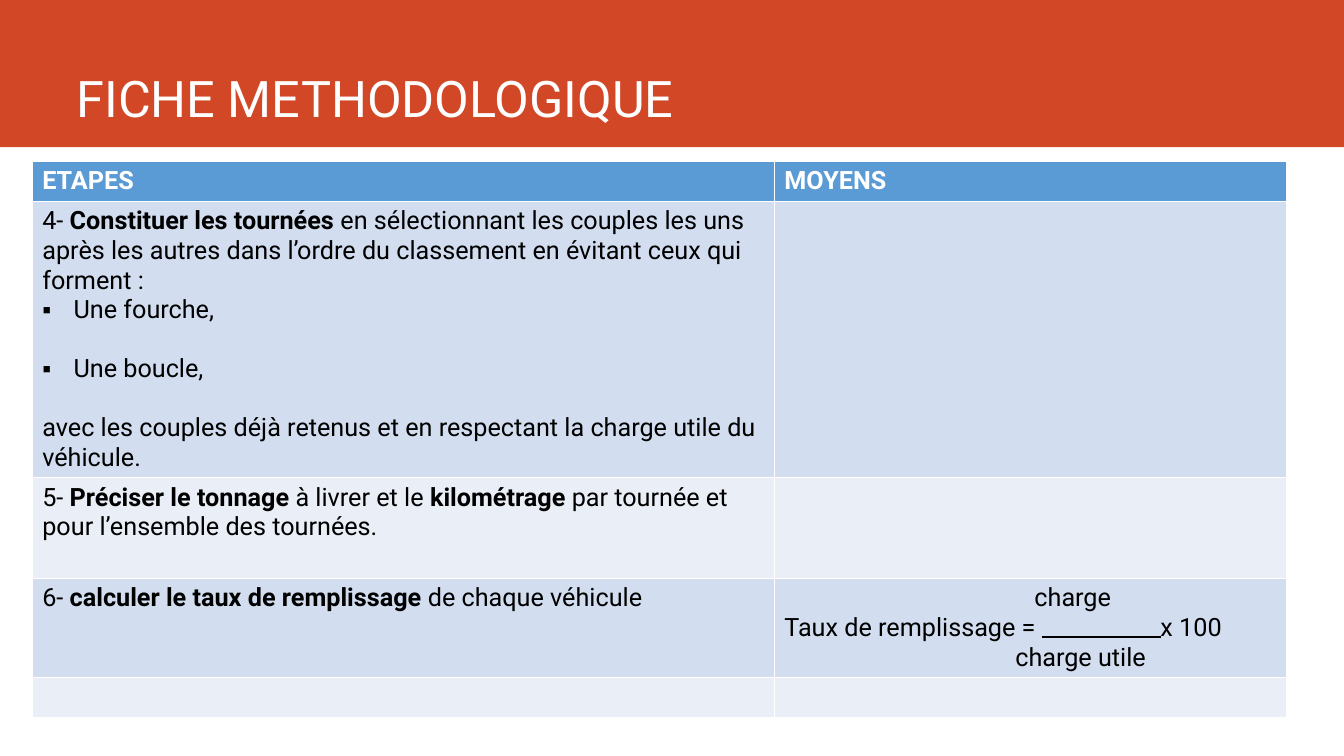
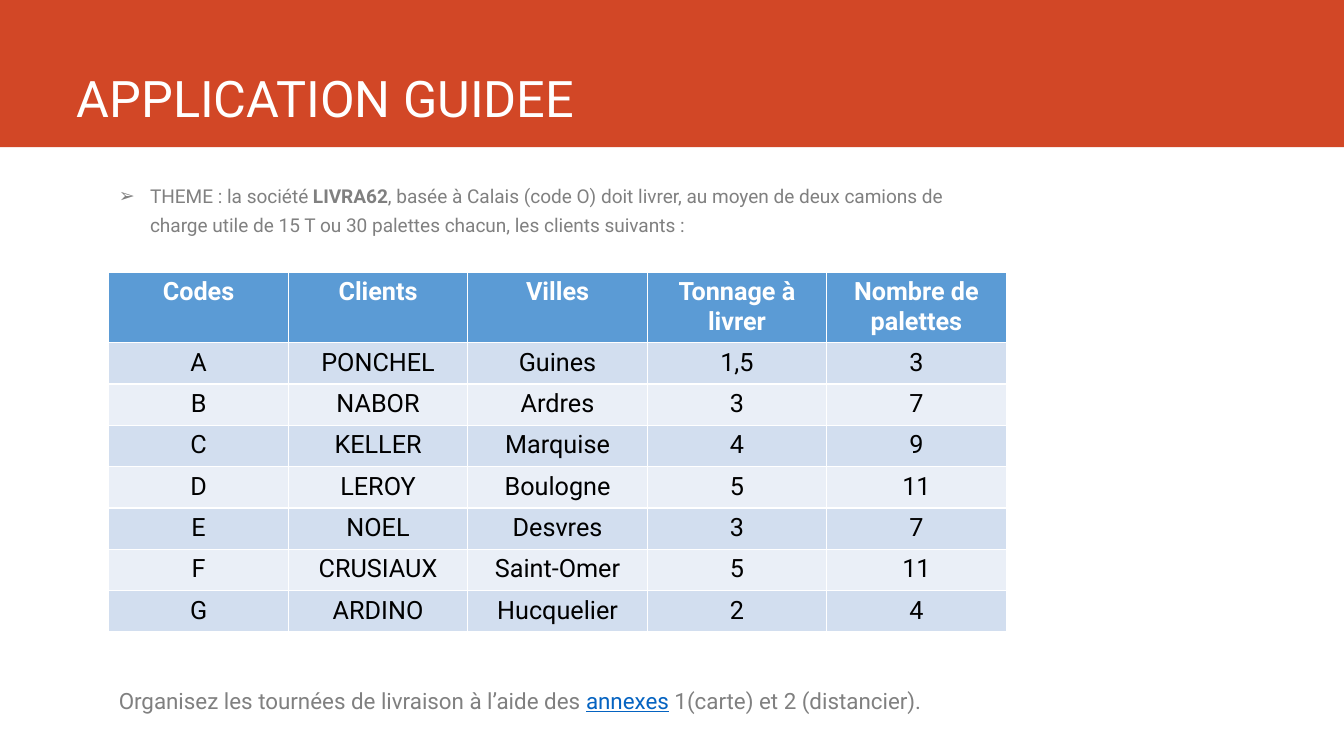
from dataclasses import dataclass

from lxml.etree import SubElement
from pptx import Presentation
from pptx.dml.color import RGBColor
from pptx.enum.shapes import MSO_CONNECTOR, MSO_SHAPE
from pptx.enum.text import MSO_ANCHOR, MSO_AUTO_SIZE, PP_ALIGN
from pptx.oxml.ns import qn
from pptx.util import Inches, Pt


@dataclass(frozen=True)
class Theme:
    font: str = "Roboto"
    band: str = "D24726"
    white: str = "FFFFFF"
    black: str = "000000"
    grey: str = "808080"
    link: str = "0563C1"
    header: str = "5B9BD5"
    stripes: tuple = ("D2DEEF", "EAEFF7")
    title_size: float = 36
    table_size: float = 18
    theme_size: float = 13.6
    task_size: float = 16


THEME = Theme()
WIDTH, HEIGHT = 13.33, 7.5
BAND_HEIGHT = 1.46
TITLE_BOX = (0.66, 0, 11.76, 1.32)
HANGING = 0.31
BLANK_LINE = 21

METHOD_TITLE = "FICHE METHODOLOGIQUE"
METHOD_ORIGIN = (0.32, 1.6)
METHOD_COLUMNS = (7.36, 5.08)
METHOD_ROWS = (0.4, 2.74, 1, 0.98, 0.4)
FRACTION_BAR = (10.33, 11.52, 6.32)
METHOD_CELLS = [
    ["ETAPES", "MOYENS"],
    [
        [
            "4- *Constituer les tournées *en sélectionnant les couples les uns après "
            "les autres dans l’ordre du classement en évitant ceux qui forment :",
            ("Une fourche,", {"bullet": "▪", "after": BLANK_LINE}),
            ("Une boucle,", {"bullet": "▪", "after": BLANK_LINE}),
            "avec les couples déjà retenus et en respectant la charge utile du véhicule.",
        ],
        "",
    ],
    [
        "5- *Préciser le tonnage *à livrer et le *kilométrage* par tournée "
        "et pour l’ensemble des tournées.",
        "",
    ],
    [
        "6- *calculer le taux de remplissage *de chaque véhicule",
        [
            ("charge", {"indent": 2.48}),
            ("Taux de remplissage =\tx 100", {"tab": 3.73}),
            ("charge utile", {"indent": 2.29}),
        ],
    ],
    ["", ""],
]

CASE_TITLE = "APPLICATION GUIDEE"
CASE_LEFT = 1.08
CASE_THEME = (
    "THEME : la société *LIVRA62*, basée à Calais (code O) doit livrer, au moyen de deux "
    "camions de charge utile de 15 T ou 30 palettes chacun, les clients suivants :"
)
CASE_TASK = "Organisez les tournées de livraison à l’aide des *annexes* 1(carte) et 2 (distancier)."
CLIENTS = [
    ("Codes", "Clients", "Villes", "Tonnage à livrer", "Nombre de palettes"),
    ("A", "PONCHEL", "Guines", "1,5", "3"),
    ("B", "NABOR", "Ardres", "3", "7"),
    ("C", "KELLER", "Marquise", "4", "9"),
    ("D", "LEROY", "Boulogne", "5", "11"),
    ("E", "NOEL", "Desvres", "3", "7"),
    ("F", "CRUSIAUX", "Saint-Omer", "5", "11"),
    ("G", "ARDINO", "Hucquelier", "2", "4"),
]
CLIENT_COLUMNS = [1.78] * len(CLIENTS[0])
CLIENT_ROWS = [0.67] + [0.41] * (len(CLIENTS) - 1)


def inches(*lengths):
    return [Inches(length) for length in lengths]


def rgb(value):
    return RGBColor.from_string(value)


def make_bold(font):
    font.bold = True


def make_link(font):
    font.underline = True
    font.color.rgb = rgb(THEME.link)


def set_font(paragraph, size, color, bold=False):
    font = paragraph.font
    font.name, font.size, font.bold = THEME.font, Pt(size), bold
    font.color.rgb = rgb(color)


def set_layout(paragraph, bullet=None, indent=0, tab=None, after=None, spacing=None):
    properties = paragraph._p.get_or_add_pPr()
    if bullet:
        indent = HANGING
        properties.set("indent", str(-Inches(HANGING)))
        SubElement(properties, qn("a:buFont"), typeface="Arial")
        SubElement(properties, qn("a:buChar"), char=bullet)
    if indent:
        properties.set("marL", str(Inches(indent)))
    if tab:
        stops = SubElement(properties, qn("a:tabLst"))
        SubElement(stops, qn("a:tab"), pos=str(Inches(tab)), algn="l")
    if after:
        paragraph.space_after = Pt(after)
    if spacing:
        paragraph.line_spacing = spacing


def write(paragraph, text, size, color, bold=False, emphasis=make_bold, **layout):
    set_layout(paragraph, **layout)
    set_font(paragraph, size, color, bold)
    for index, part in enumerate(text.split("*")):
        if part:
            run = paragraph.add_run()
            run.text = part
            if index % 2:
                emphasis(run.font)


def add_table(slide, origin, cells, columns, rows, align=PP_ALIGN.LEFT):
    size = inches(sum(columns), sum(rows))
    table = slide.shapes.add_table(len(rows), len(columns), *inches(*origin), *size).table
    for column, width in zip(table.columns, columns):
        column.width = Inches(width)
    for row_index, (row, height, contents) in enumerate(zip(table.rows, rows, cells)):
        row.height = Inches(height)
        heading = row_index == 0
        fill = THEME.header if heading else THEME.stripes[(row_index - 1) % 2]
        color = THEME.white if heading else THEME.black
        for cell, content in zip(row.cells, contents):
            cell.fill.solid()
            cell.fill.fore_color.rgb = rgb(fill)
            items = content if isinstance(content, list) else [content]
            for index, item in enumerate(items):
                text, layout = item if isinstance(item, tuple) else (item, {})
                frame = cell.text_frame
                paragraph = frame.add_paragraph() if index else frame.paragraphs[0]
                write(paragraph, text, THEME.table_size, color, heading, **layout)
                paragraph.alignment = align


def add_text(slide, box, text, size, **options):
    frame = slide.shapes.add_textbox(*inches(*box)).text_frame
    frame.word_wrap = True
    write(frame.paragraphs[0], text, size, THEME.grey, **options)


def add_titled_slide(presentation, text):
    slide = presentation.slides.add_slide(presentation.slide_layouts[5])
    band = slide.shapes.add_shape(MSO_SHAPE.RECTANGLE, *inches(0, 0, WIDTH, BAND_HEIGHT))
    band.shadow.inherit = False
    band.fill.solid()
    band.fill.fore_color.rgb = rgb(THEME.band)
    band.line.fill.background()
    title = slide.shapes.title
    title.element.addprevious(band.element)
    title.left, title.top, title.width, title.height = inches(*TITLE_BOX)
    frame = title.text_frame
    frame.vertical_anchor = MSO_ANCHOR.BOTTOM
    frame.auto_size = MSO_AUTO_SIZE.NONE
    write(frame.paragraphs[0], text, THEME.title_size, THEME.white)
    frame.paragraphs[0].alignment = PP_ALIGN.LEFT
    return slide


def add_method_slide(presentation):
    slide = add_titled_slide(presentation, METHOD_TITLE)
    add_table(slide, METHOD_ORIGIN, METHOD_CELLS, METHOD_COLUMNS, METHOD_ROWS)
    start, end, level = FRACTION_BAR
    bar = slide.shapes.add_connector(MSO_CONNECTOR.STRAIGHT, *inches(start, level, end, level))
    bar.line.color.rgb = rgb(THEME.black)
    bar.line.width = Pt(1.5)
    SubElement(bar.element.spPr, qn("a:effectLst"))


def add_case_slide(presentation):
    slide = add_titled_slide(presentation, CASE_TITLE)
    add_text(slide, (CASE_LEFT, 1.71, 8.45, 0.91), CASE_THEME, THEME.theme_size,
             bullet="➢", spacing=1.3, after=12)
    add_table(slide, (CASE_LEFT, 2.7), CLIENTS, CLIENT_COLUMNS, CLIENT_ROWS, PP_ALIGN.CENTER)
    add_text(slide, (CASE_LEFT, 6.63, 8.27, 0.68), CASE_TASK, THEME.task_size,
             emphasis=make_link, spacing=1.5, after=12)


def main():
    presentation = Presentation()
    presentation.slide_width, presentation.slide_height = inches(WIDTH, HEIGHT)
    add_method_slide(presentation)
    add_case_slide(presentation)
    presentation.save("out.pptx")


if __name__ == "__main__":
    main()
